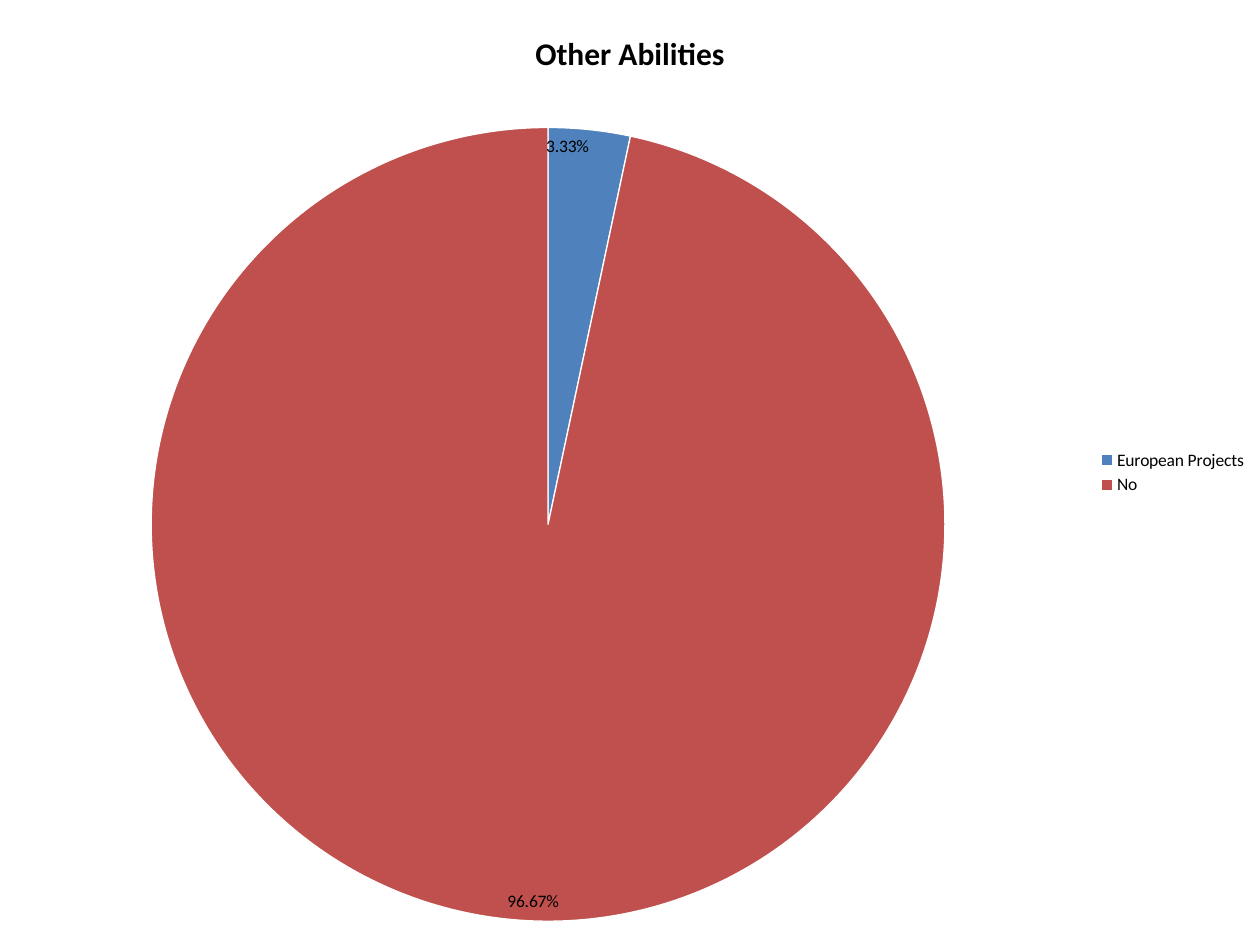
from lxml.etree import SubElement
from pptx import Presentation
from pptx.chart.data import CategoryChartData
from pptx.dml.color import RGBColor
from pptx.enum.chart import XL_CHART_TYPE, XL_LABEL_POSITION, XL_LEGEND_POSITION
from pptx.oxml.ns import qn
from pptx.util import Inches, Pt

COLORS = {"text": "000000", "edge": "FFFFFF", "European Projects": "4F81BD", "No": "C0504D"}
ABILITIES = {"European Projects": 0.0333, "No": 0.9667}
TITLE = "Other Abilities"
FONT = "Calibri"


def color(name):
    return RGBColor.from_string(COLORS[name])


def style_font(font, size, bold=False):
    font.name = FONT
    font.size = Pt(size)
    font.bold = bold
    font.color.rgb = color("text")


def place_plot(chart, x, y, w, h):
    plot_area = chart._chartSpace.chart.plotArea
    for old_layout in plot_area.findall(qn("c:layout")):
        plot_area.remove(old_layout)
    layout = SubElement(plot_area, qn("c:layout"))
    plot_area.insert(0, layout)
    manual = SubElement(layout, qn("c:manualLayout"))
    settings = {"layoutTarget": "inner", "xMode": "edge", "yMode": "edge",
                "x": x, "y": y, "w": w, "h": h}
    for tag, value in settings.items():
        SubElement(manual, qn(f"c:{tag}")).set("val", str(value))


def add_pie(page, left, top, width, height):
    data = CategoryChartData(number_format="0.00%")
    data.categories = list(ABILITIES)
    data.add_series(TITLE, list(ABILITIES.values()))
    chart = page.shapes.add_chart(XL_CHART_TYPE.PIE, left, top, width, height, data).chart
    style_font(chart.font, 10)

    chart.has_title = True
    para = chart.chart_title.text_frame.paragraphs[0]
    span = para.add_run()
    span.text = TITLE
    style_font(span.font, 18, bold=True)
    chart.chart_title.include_in_layout = False

    chart.has_legend = True
    chart.legend.position = XL_LEGEND_POSITION.RIGHT
    chart.legend.include_in_layout = False
    style_font(chart.legend.font, 10)

    plot = chart.plots[0]
    plot.vary_by_categories = True
    for index, name in enumerate(ABILITIES):
        slice_format = plot.series[0].points[index].format
        slice_format.fill.solid()
        slice_format.fill.fore_color.rgb = color(name)
        slice_format.line.color.rgb = color("edge")
        slice_format.line.width = Pt(0.75)

    labels = plot.series[0].data_labels
    labels.show_value = True
    labels.show_percentage = False
    labels.number_format = "0.00%"
    labels.number_format_is_linked = False
    labels.position = XL_LABEL_POSITION.INSIDE_END
    style_font(labels.font, 10)
    place_plot(chart, 0.12, 0.13, 0.63, 0.85)


def main():
    deck = Presentation()
    deck.slide_width = Inches(10)
    deck.slide_height = Inches(7.5)
    page = deck.slides.add_slide(deck.slide_layouts[6])
    add_pie(page, Inches(0), Inches(0), Inches(10), Inches(7.5))
    deck.save("out.pptx")


if __name__ == "__main__":
    main()
